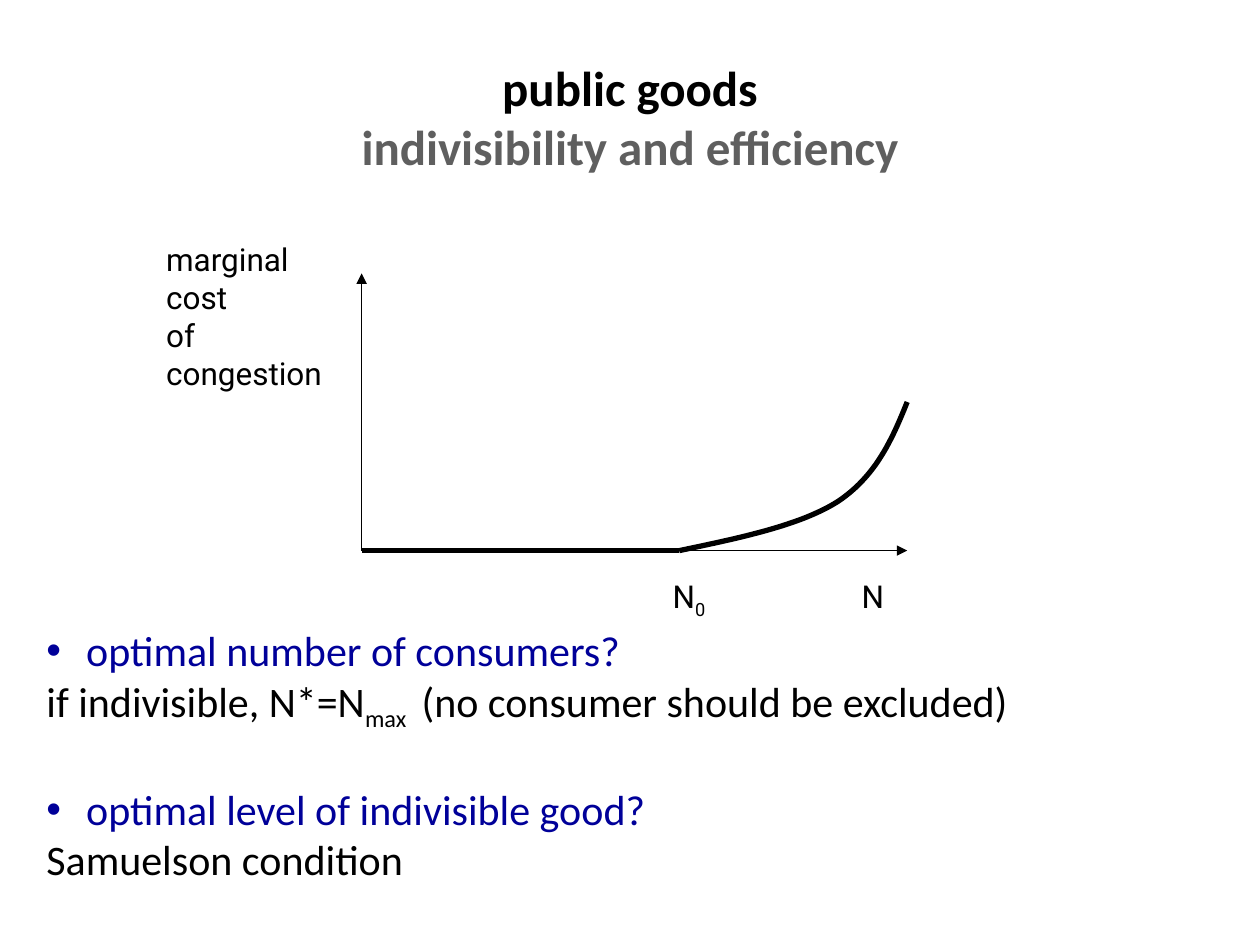
from dataclasses import dataclass

from lxml import etree
from pptx import Presentation
from pptx.dml.color import RGBColor
from pptx.enum.shapes import MSO_CONNECTOR
from pptx.enum.text import MSO_ANCHOR, PP_ALIGN
from pptx.oxml.ns import qn
from pptx.util import Inches, Pt

BLACK = RGBColor(0x00, 0x00, 0x00)
GRAY = RGBColor(0x5F, 0x5F, 0x5F)
NAVY = RGBColor(0x00, 0x00, 0x99)
BULLET_INDENT = Inches(0.24)
CURVE_STEPS = 24

Point = tuple[float, float]


@dataclass(frozen=True)
class Words:
    text: str
    color: RGBColor = BLACK
    subscript: bool = False


@dataclass(frozen=True)
class Line:
    words: tuple[Words, ...]
    bullet: bool = False
    space_before: float = 0


@dataclass(frozen=True)
class Block:
    left: float
    top: float
    width: float
    height: float
    lines: tuple[Line, ...]
    font: str = "Roboto"
    size: int = 18
    wrap: bool = True


@dataclass(frozen=True)
class Segment:
    start: Point
    end: Point
    weight: float = 0.75
    arrow: bool = False


def add_words(paragraph, words: Words, font: str, size: int, bold: bool = False) -> None:
    run = paragraph.add_run()
    run.text = words.text
    run.font.name = font
    run.font.size = Pt(size)
    run.font.bold = bold
    run.font.color.rgb = words.color
    if words.subscript:
        run.font._element.set("baseline", "-25000")


def add_bullet(paragraph) -> None:
    properties = paragraph._p.get_or_add_pPr()
    properties.set("marL", str(BULLET_INDENT))
    properties.set("indent", str(-BULLET_INDENT))
    etree.SubElement(properties, qn("a:buFont"), typeface="Arial")
    etree.SubElement(properties, qn("a:buChar"), char="•")


def draw_title(slide, lines: tuple[Words, ...]) -> None:
    title = slide.shapes.add_textbox(Inches(0.5), Inches(0.3), Inches(9), Inches(1.25))
    frame = title.text_frame
    frame.word_wrap = True
    frame.vertical_anchor = MSO_ANCHOR.MIDDLE
    paragraph = frame.paragraphs[0]
    paragraph.alignment = PP_ALIGN.CENTER
    for index, words in enumerate(lines):
        if index:
            paragraph.add_line_break()
        add_words(paragraph, words, "Calibri", 28, bold=True)


def draw_block(slide, block: Block) -> None:
    box = slide.shapes.add_textbox(
        Inches(block.left), Inches(block.top), Inches(block.width), Inches(block.height)
    )
    frame = box.text_frame
    frame.word_wrap = block.wrap
    for index, line in enumerate(block.lines):
        paragraph = frame.add_paragraph() if index else frame.paragraphs[0]
        if line.space_before:
            paragraph.space_before = Pt(line.space_before)
        if line.bullet:
            add_bullet(paragraph)
        for words in line.words:
            add_words(paragraph, words, block.font, block.size)


def draw_segment(slide, segment: Segment) -> None:
    ends = [Inches(value) for value in segment.start + segment.end]
    connector = slide.shapes.add_connector(MSO_CONNECTOR.STRAIGHT, *ends)
    connector.line.color.rgb = BLACK
    connector.line.width = Pt(segment.weight)
    if segment.arrow:
        outline = connector.line._get_or_add_ln()
        etree.SubElement(outline, qn("a:tailEnd"), type="triangle")
    etree.SubElement(connector._element.spPr, qn("a:effectLst"))


def bezier_point(controls: tuple[Point, ...], t: float) -> Point:
    weights = ((1 - t) ** 3, 3 * t * (1 - t) ** 2, 3 * t**2 * (1 - t), t**3)
    x, y = (sum(w * p[axis] for w, p in zip(weights, controls)) for axis in (0, 1))
    return x, y


def draw_curve(slide, controls: tuple[Point, ...]) -> None:
    points = [controls[0]] + [
        bezier_point(controls[first:first + 4], step / CURVE_STEPS)
        for first in range(0, len(controls) - 1, 3)
        for step in range(1, CURVE_STEPS + 1)
    ]
    start, *rest = [(Inches(x), Inches(y)) for x, y in points]
    builder = slide.shapes.build_freeform(*start)
    builder.add_line_segments(rest, close=False)
    curve = builder.convert_to_shape()
    curve.fill.background()
    curve.line.color.rgb = BLACK
    curve.line.width = Pt(3)
    curve.shadow.inherit = False


ORIGIN = (2.87, 4.37)
CONGESTION_START = (5.39, 4.37)

TITLE = (Words("public goods"), Words("indivisibility and efficiency", GRAY))

SEGMENTS = (
    Segment(ORIGIN, (7.2, 4.37), arrow=True),
    Segment(ORIGIN, (2.87, 2.17), arrow=True),
    Segment(ORIGIN, CONGESTION_START, weight=3),
)

CONGESTION_COST = (
    CONGESTION_START, (5.87, 4.27), (6.35, 4.17), (6.65, 3.98),
    (6.95, 3.78), (7.08, 3.49), (7.2, 3.19),
)

BLOCKS = (
    Block(1.22, 1.86, 1.66, 0.7, (
        Line((Words("marginal cost"),)),
        Line((Words("of congestion"),)),
    )),
    Block(6.74, 4.53, 0.38, 0.4, (Line((Words("N"),)),), wrap=False),
    Block(5.24, 4.53, 0.47, 0.4, (
        Line((Words("N"), Words("0", subscript=True))),
    ), wrap=False),
    Block(0.27, 4.91, 9.53, 2.12, (
        Line((Words(" optimal number of consumers?", NAVY),), bullet=True),
        Line((
            Words("if indivisible, N*=N"),
            Words("max ", subscript=True),
            Words(" (no consumer should be excluded)"),
        )),
        Line((Words(" optimal level of indivisible good?", NAVY),),
             bullet=True, space_before=29),
        Line((Words("Samuelson condition"),)),
    ), font="Calibri", size=24),
)


def main() -> None:
    presentation = Presentation()
    presentation.slide_width = Inches(10)
    presentation.slide_height = Inches(7.5)
    slide = presentation.slides.add_slide(presentation.slide_layouts[6])
    draw_title(slide, TITLE)
    for segment in SEGMENTS:
        draw_segment(slide, segment)
    draw_curve(slide, CONGESTION_COST)
    for block in BLOCKS:
        draw_block(slide, block)
    presentation.save("out.pptx")


if __name__ == "__main__":
    main()
